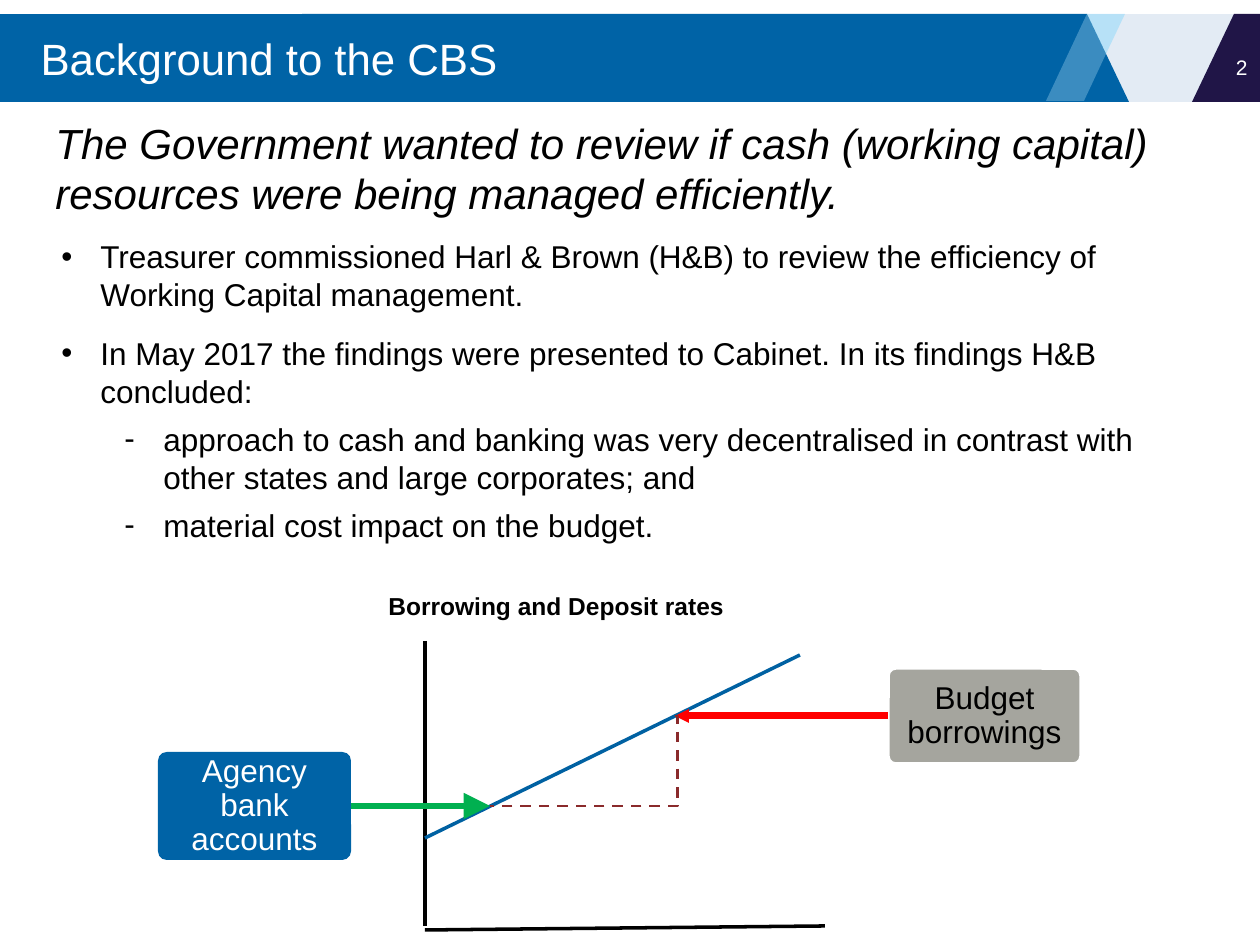
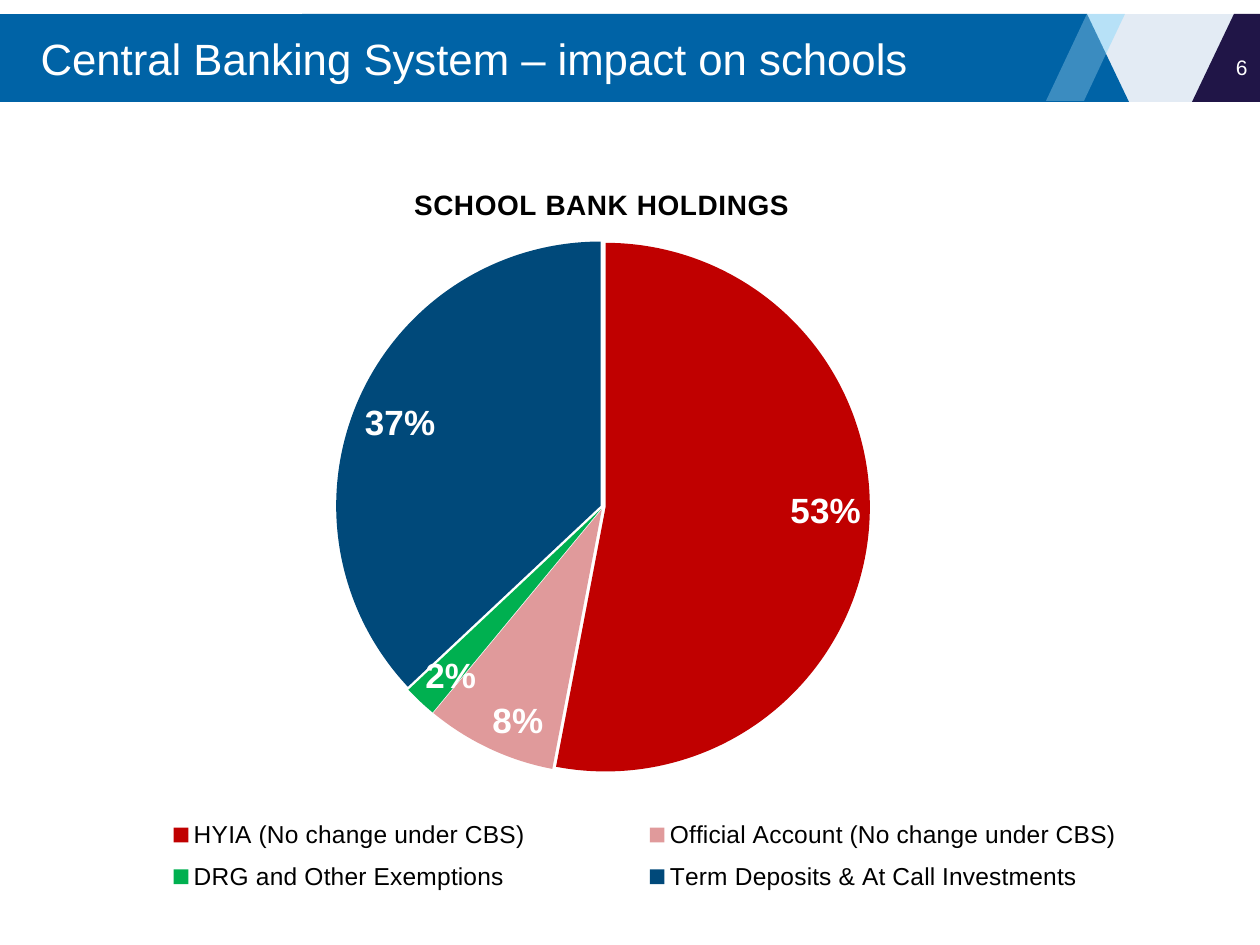
"""Builds two slides on the central banking system with a shared header band."""
from lxml.etree import SubElement
from pptx import Presentation
from pptx.chart.data import CategoryChartData
from pptx.dml.color import RGBColor
from pptx.enum.chart import XL_CHART_TYPE, XL_LABEL_POSITION, XL_LEGEND_POSITION
from pptx.enum.dml import MSO_LINE
from pptx.enum.shapes import MSO_CONNECTOR, MSO_SHAPE
from pptx.enum.text import MSO_ANCHOR, PP_ALIGN
from pptx.oxml.ns import qn
from pptx.util import Pt

PX = 914400 / 126
FONT = "Arial"
COLORS = {
    "white": "FFFFFF", "black": "000000", "blue": "0063A6", "navy": "201547",
    "pale": "E3EBF4", "sky": "52CCFF", "ice": "C5EEFF", "grey": "A5A59E",
    "rate": "0061A2", "green": "00B050", "red": "FF0000", "maroon": "8A2A2B",
    "crimson": "C00000", "pink": "E09A9B", "deep": "00497A",
}
BAND = [
    ("pale", None, [(1081, 14), (1235, 14), (1235, 102), (1081, 102)]),
    ("blue", None, [(0, 14), (304, 14), (304, 102), (0, 102)]),
    ("blue", None, [(302, 14), (1087, 14), (1129, 102), (302, 102)]),
    ("sky", 30, [(1087, 14), (1125, 14), (1106, 54)]),
    ("ice", 30, [(1087, 14), (1046, 101), (1084, 101), (1106, 54)]),
    ("navy", None, [(1234, 14), (1192, 102), (1260, 102), (1260, 14)]),
]
FINDINGS = [
    (0, 0, "Treasurer commissioned Harl & Brown (H&B) to review the efficiency of "
           "Working Capital management."),
    (0, 12, "In May 2017 the findings were presented to Cabinet. In its findings H&B "
            "concluded:"),
    (1, 6, "approach to cash and banking was very decentralised in contrast with "
           "other states and large corporates; and"),
    (1, 6, "material cost impact on the budget."),
]
HOLDINGS_BOX = (57, 151, 1176, 779)
HOLDINGS = [
    ("HYIA (No change under CBS)", 53, "crimson"),
    ("Official Account (No change under CBS)", 8, "pink"),
    ("DRG and Other Exemptions", 2, "green"),
    ("Term Deposits & At Call Investments", 37, "deep"),
]


def px(*values):
    """Turn px lengths into EMU."""
    return [round(v * PX) for v in values]


def rgb(name):
    """Look up a colour by name."""
    return RGBColor.from_string(COLORS[name])


def style_font(font, size, color="black", bold=False, italic=False):
    """Set the face, size, colour and weight of a font."""
    font.name, font.size = FONT, Pt(size)
    font.bold, font.italic = bold, italic
    font.color.rgb = rgb(color)


def add_run(p, text, size, color="black", **style):
    """Append a formatted run to a paragraph."""
    r = p.add_run()
    r.text = text
    style_font(r.font, size, color, **style)
    return r


def add_polygon(slide, color, opacity, points):
    """Draw a filled outline, optionally translucent."""
    builder = slide.shapes.build_freeform(*points[0], scale=PX)
    builder.add_line_segments(points[1:])
    sp = builder.convert_to_shape()
    sp.shadow.inherit = False
    sp.fill.solid()
    sp.fill.fore_color.rgb = rgb(color)
    sp.line.fill.background()
    if opacity:
        clr = sp._element.spPr.find(".//" + qn("a:srgbClr"))
        SubElement(clr, qn("a:alpha"), val=str(opacity * 1000))
    return sp


def add_band(slide):
    """Draw the header band and move it to the layout that the slides share."""
    tree = slide.slide_layout.shapes._spTree
    for i, part in enumerate(BAND):
        tree.insert(2 + i, add_polygon(slide, *part)._element)


def add_text(slide, box, text="", size=18, align=PP_ALIGN.LEFT,
             anchor=MSO_ANCHOR.TOP, wrap=True, **style):
    """Add a text box whose first paragraph holds the given text."""
    tf = slide.shapes.add_textbox(*px(*box)).text_frame
    tf.word_wrap, tf.vertical_anchor = wrap, anchor
    p = tf.paragraphs[0]
    p.alignment = align
    if text:
        add_run(p, text, size, **style)
    return tf


def add_header(slide, title, number):
    """Fill the title placeholder and the page number."""
    sp = slide.shapes.title
    sp.left, sp.top, sp.width, sp.height = px(28, 15, 1134, 86)
    tf = sp.text_frame
    tf.vertical_anchor = MSO_ANCHOR.MIDDLE
    p = tf.paragraphs[0]
    p.alignment = PP_ALIGN.LEFT
    add_run(p, title, 25, "white")
    add_text(slide, (1207, 42, 53, 50), number, 12, PP_ALIGN.RIGHT,
             MSO_ANCHOR.MIDDLE, color="white")


def add_bullets(slide, box, items):
    """Add a two-level bulleted list."""
    tf = add_text(slide, box)
    for i, (level, before, text) in enumerate(items):
        p = tf.add_paragraph() if i else tf.paragraphs[0]
        p.level, p.space_before = level, Pt(before)
        pPr = p._p.get_or_add_pPr()
        pPr.set("marL", str(px(39 + 63 * level)[0]))
        pPr.set("indent", str(px(-39)[0]))
        SubElement(pPr, qn("a:buFont"), typeface=FONT)
        SubElement(pPr, qn("a:buChar"), char="•-"[level])
        add_run(p, text, 18)


def add_label_box(slide, box, text, fill, color, outline=None):
    """Add a rounded box with a centred label."""
    sp = slide.shapes.add_shape(MSO_SHAPE.ROUNDED_RECTANGLE, *px(*box))
    sp.adjustments[0] = 0.08
    sp.shadow.inherit = False
    sp.fill.solid()
    sp.fill.fore_color.rgb = rgb(fill)
    if outline:
        sp.line.color.rgb, sp.line.width = rgb(outline), Pt(2)
    else:
        sp.line.fill.background()
    tf = sp.text_frame
    tf.word_wrap, tf.vertical_anchor = True, MSO_ANCHOR.MIDDLE
    tf.margin_left, tf.margin_top, tf.margin_right, tf.margin_bottom = px(5, 4, 5, 4)
    p = tf.paragraphs[0]
    p.alignment, p.line_spacing = PP_ALIGN.CENTER, 0.9
    add_run(p, text, 18, color)
    return sp


def add_line(slide, ends, color, width, kind=MSO_CONNECTOR.STRAIGHT, head=None):
    """Add a connector, with an arrowhead of the given size at its end."""
    line = slide.shapes.add_connector(kind, *px(*ends))
    line.line.color.rgb, line.line.width = rgb(color), Pt(width)
    if head:
        SubElement(line.line._get_or_add_ln(), qn("a:tailEnd"),
                   type="triangle", w=head, len=head)
    SubElement(line._element.spPr, qn("a:effectLst"))
    return line


def add_rate_diagram(slide):
    """Draw the rate line between the deposit and borrowing boxes."""
    agency = add_label_box(slide, (158, 752, 193, 108), "Agency bank accounts",
                           "blue", "white")
    budget = add_label_box(slide, (888, 668, 193, 96), "Budget borrowings",
                           "grey", "black", "white")
    add_line(slide, (425, 641, 425, 926), "black", 1.75)
    add_line(slide, (425, 930, 825, 926), "black", 2)
    add_line(slide, (425, 838, 800, 655), "rate", 2)
    deposit = add_line(slide, (351, 806, 490, 806), "green", 3, head="lg")
    deposit.begin_connect(agency, 3)
    borrowing = add_line(slide, (888, 716, 675, 716), "red", 4, head="sm")
    borrowing.begin_connect(budget, 1)
    gap = add_line(slide, (675, 716, 490, 806), "maroon", 1.5, MSO_CONNECTOR.ELBOW)
    gap.line.dash_style = MSO_LINE.DASH
    guides = gap._element.spPr.find(".//" + qn("a:avLst"))
    SubElement(guides, qn("a:gd"), name="adj1", fmla="val -1400")
    add_text(slide, (376, 585, 363, 43), "Borrowing and Deposit rates", 14,
             wrap=False, bold=True)


def place(element, index, chart_size, box, inner=False):
    """Give a chart part a manual layout from px inside the chart."""
    for old in element.findall(qn("c:layout")):
        element.remove(old)
    layout = element.makeelement(qn("c:layout"))
    element.insert(index, layout)
    manual = SubElement(layout, qn("c:manualLayout"))
    if inner:
        SubElement(manual, qn("c:layoutTarget"), val="inner")
    for mode in ("xMode", "yMode"):
        SubElement(manual, qn("c:" + mode), val="edge")
    for key, length, whole in zip("xywh", box, chart_size * 2):
        SubElement(manual, qn("c:" + key), val=str(length / whole))


def add_pie(slide, box, title, rows):
    """Add a pie chart with percentage labels and a legend below."""
    data = CategoryChartData()
    data.categories = [name for name, _, _ in rows]
    data.add_series("Series 1", [value for _, value, _ in rows])
    chart = slide.shapes.add_chart(XL_CHART_TYPE.PIE, *px(*box), data).chart
    size = box[2:]
    style_font(chart.font, 10)
    chart.has_title = True
    r = add_run(chart.chart_title.text_frame.paragraphs[0], title, 16, bold=True)
    r.font._element.set("spc", "50")
    place(chart.chart_title._element, 1, size, (352, 31))

    chart.has_legend = True
    legend = chart.legend
    legend.position = XL_LEGEND_POSITION.TOP
    legend.include_in_layout = False
    style_font(legend.font, 14)
    place(legend._element, 1, size, (0, 656, 1176, 98))

    plot = chart.plots[0]
    plot.vary_by_categories = True
    place(chart._chartSpace.chart.plotArea, 0, size, (279, 89, 534, 534), inner=True)
    series = plot.series[0]
    for i, (_, _, color) in enumerate(rows):
        fill = series.points[i].format.fill
        fill.solid()
        fill.fore_color.rgb = rgb(color)
    ser = series._element
    explosion = ser.makeelement(qn("c:explosion"), val="1")
    ser.find(qn("c:dPt")).addprevious(explosion)
    labels = series.data_labels
    labels.show_percentage, labels.show_value = True, False
    labels.number_format, labels.number_format_is_linked = "0%", False
    labels.position = XL_LABEL_POSITION.INSIDE_END
    style_font(labels.font, 20, "white", bold=True)


def main():
    """Build and save the presentation."""
    prs = Presentation()
    prs.slide_width, prs.slide_height = px(1260, 945)
    layout = prs.slide_layouts[5]

    s = prs.slides.add_slide(layout)
    add_band(s)
    add_header(s, "Background to the CBS", "2")
    add_text(s, (43, 111, 1191, 115),
             "The Government wanted to review if cash (working capital) "
             "resources were being managed efficiently.", 24, italic=True)
    add_bullets(s, (49, 231, 1152, 360), FINDINGS)
    add_rate_diagram(s)

    s = prs.slides.add_slide(layout)
    add_header(s, "Central Banking System – impact on schools", "6")
    add_pie(s, HOLDINGS_BOX, "SCHOOL BANK HOLDINGS", HOLDINGS)
    prs.save("out.pptx")


if __name__ == "__main__":
    main()
